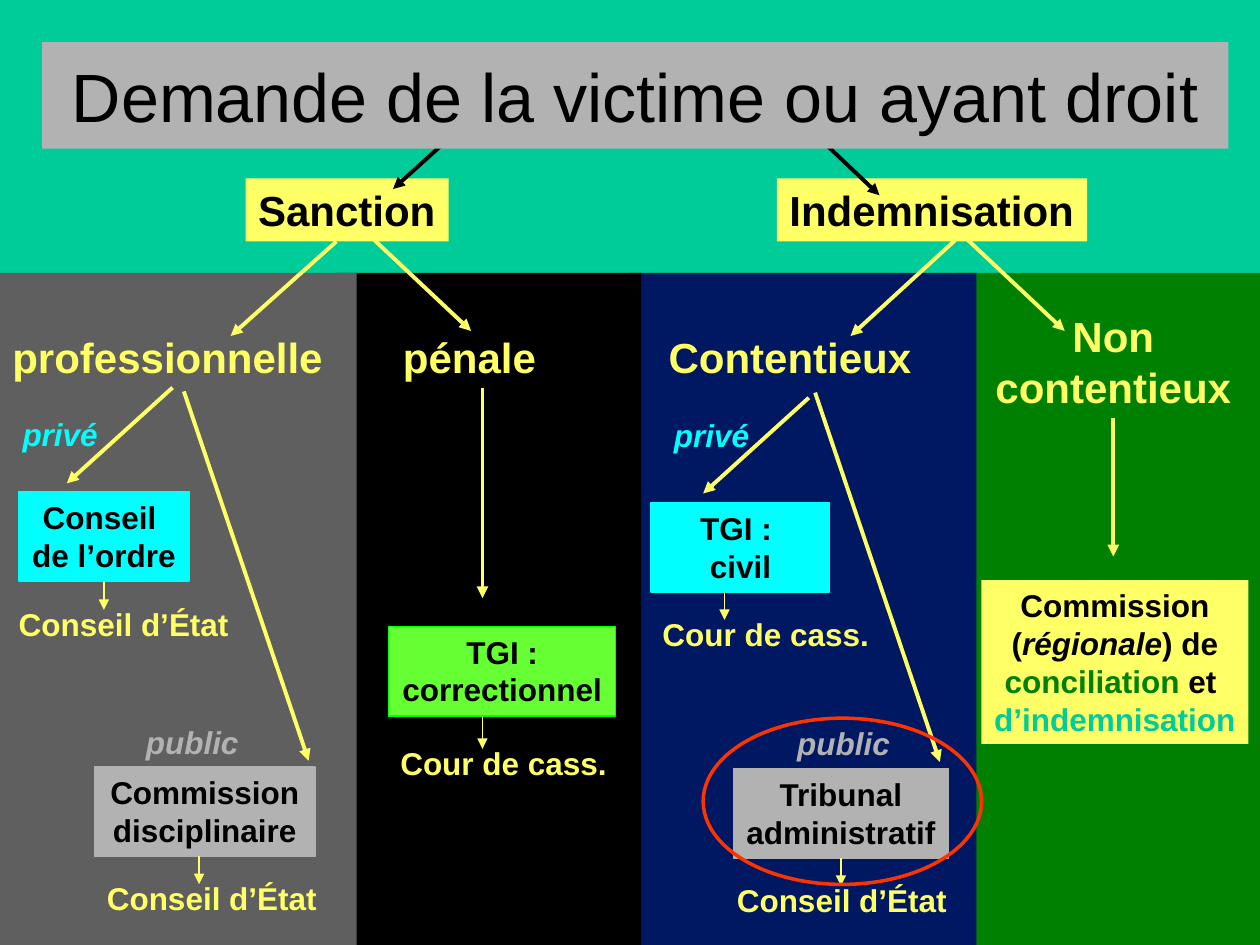
from pptx import Presentation
from pptx.dml import color
from pptx.enum import shapes, text
from pptx.oxml import ns
from pptx import util as u
from lxml import etree

Pt = u.Pt
YELLOW, CYAN, GREY, TEAL, BLACK = "FFFF66", "00FFFF", "B2B2B2", "00CC99", "000000"
COL_TOP, COL_H = 156, 384


def rgb(value):
    return color.RGBColor.from_string(value)


def style(r, size, ink, bold=True, italic=False):
    f = r.font
    f.name, f.size, f.bold, f.italic = "Arial", Pt(size), bold, italic
    f.color.rgb = rgb(ink)


def panel(s, x, y, w, h, fill=None, line=None, width=0.75, kind=shapes.MSO_SHAPE.RECTANGLE):
    sp = s.shapes.add_shape(kind, Pt(x), Pt(y), Pt(w), Pt(h))
    sp.shadow.inherit = False
    if fill:
        sp.fill.solid()
        sp.fill.fore_color.rgb = rgb(fill)
    else:
        sp.fill.background()
    if line:
        sp.line.color.rgb = rgb(line)
        sp.line.width = Pt(width)
    else:
        sp.line.fill.background()
    return sp


def label(s, x, y, w, h, words, size=18, ink=YELLOW, fill=None, line=None, italic=False):
    if fill:
        sp = panel(s, x, y, w, h, fill, line)
    else:
        sp = s.shapes.add_textbox(Pt(x), Pt(y), Pt(w), Pt(h))
    tf = sp.text_frame
    tf.text = words
    tf.word_wrap = False
    tf.auto_size = text.MSO_AUTO_SIZE.SHAPE_TO_FIT_TEXT
    tf.vertical_anchor = text.MSO_ANCHOR.TOP
    align = text.PP_ALIGN.CENTER if "\n" in words else text.PP_ALIGN.LEFT
    for p in tf.paragraphs:
        p.alignment = align
        for r in p.runs:
            style(r, size, ink, italic=italic)
    return sp


def arrow(s, x1, y1, x2, y2, ink=YELLOW, width=2.25, start=None):
    cx = s.shapes.add_connector(shapes.MSO_CONNECTOR.STRAIGHT, Pt(x1), Pt(y1), Pt(x2), Pt(y2))
    if start is not None:
        cx.begin_connect(start, 2)
    cx.line.color.rgb = rgb(ink)
    cx.line.width = Pt(width)
    ln = cx.line._get_or_add_ln()
    etree.SubElement(ln, ns.qn("a:tailEnd"), type="triangle")
    etree.SubElement(cx.element.spPr, ns.qn("a:effectLst"))


def court(s, x, y, w, words, fill, line, appeal, appeal_x, stem=None, drop=60.5):
    sp = label(s, x, y, w, 51.1, words, ink=BLACK, fill=fill, line=line)
    stem_x = x + w / 2 if stem is None else stem
    arrow(s, stem_x, y + 51.1, stem_x, y + drop + 6.5, width=1,
          start=sp if stem is None else None)
    label(s, appeal_x, y + drop, 134.6, 28.8, appeal)


def branches(s, x, y, private_start, public_start):
    label(s, x, y, 57.6, 28.8, "privé", ink=CYAN, italic=True)
    label(s, x + 70.5, y + 176, 67.7, 28.8, "public", ink=GREY, italic=True)
    for (x1, y1), dx, dy in ((private_start, -60.4, 54.7), (public_start, 71.3, 211)):
        arrow(s, x1, y1, x1 + dx, y1 + dy)


def header(s, x, y, w, h):
    panel(s, x, y, w, h, TEAL, TEAL, 1)
    label(s, x + 140.4, y + 102, 116, 36, "Sanction", 24, BLACK, YELLOW)
    label(s, x + 444, y + 102, 177.2, 36, "Indemnisation", 24, BLACK, YELLOW)
    arrow(s, x + 284.4, y + 54, x + 224.6, y + 108, BLACK)
    arrow(s, x + 444.2, y + 56.2, x + 502.6, y + 111.6, BLACK)


def non_litigation(s, x, y, w, h):
    panel(s, x, y, w, h, "008000")
    name = label(s, x + 6.5, y + 18, 167.8, 64.8, "Non\ncontentieux", 24)
    arrow(s, x + 3.6, y - 22.3, x + 62.6, y + 33.1)
    arrow(s, x + 90.4, y + 82.8, x + 90.4, y + 162, start=name)
    sp = label(s, x + 15, y + 175.5, 152.6, 93.6,
               "Commission\n(\nconciliation\nd’indemnisation", ink=BLACK, fill=YELLOW)
    ps = sp.text_frame.paragraphs
    for p, words, italic in ((ps[1], "régionale", True), (ps[1], ") de", False), (ps[2], " et ", False)):
        r = p.add_run()
        r.text = words
        style(r, 18, BLACK, italic=italic)
    style(ps[2].runs[0], 18, "008000")
    style(ps[3].runs[0], 18, TEAL)


def litigation(s, x, y, w, h):
    panel(s, x, y, w, h, "001762")
    label(s, x + 15, y + 30, 153.4, 36, "Contentieux", 24)
    arrow(s, x + 185.8, y - 18.7, x + 126, y + 36)
    court(s, x + 12, y + 131.2, 102.2, "TGI : \ncivil", CYAN, CYAN,
          "Cour de cass.", x + 11.5, x + 54)
    court(s, x + 59, y + 283.2, 123.1, "Tribunal\nadministratif", GREY, GREY,
          "Conseil d’État", x + 54)
    branches(s, x + 18, y + 78, (x + 102.2, y + 71.3), (x + 105.8, y + 68.4))


def criminal(s, x, y, w, h):
    panel(s, x, y, w, h, BLACK)
    arrow(s, x + 18, y - 22.3, x + 77, y + 33.1)
    label(s, x + 31, y + 30, 90.7, 36, "pénale", 24)
    arrow(s, x + 83.5, y + 65.5, x + 83.5, y + 185.8)
    court(s, x + 30, y + 202, 129.6, "TGI :\ncorrectionnel", "66FF33", "00FF00",
          "Cour de cass.", x + 29.5, x + 83.5, 63.4)


def professional(s, x, y, w, h):
    panel(s, x, y, w, h, "5F5F5F")
    arrow(s, x + 192.2, y - 18, x + 131.8, y + 36)
    label(s, x, y + 30, 196, 36, "professionnelle", 24)
    court(s, x + 10.8, y + 125, 97.2, "Conseil \nde l’ordre", CYAN, CYAN,
          "Conseil d’État", x + 3.6, drop=61)
    court(s, x + 54, y + 282.2, 126, "Commission \ndisciplinaire", GREY, GREY,
          "Conseil d’État", x + 54, x + 113.8)
    branches(s, x + 5.8, y + 77.4, (x + 98.6, y + 65.5), (x + 105.1, y + 67.7))


def title(s, x, y, w, h):
    sp = s.shapes.title
    sp.left, sp.top, sp.width, sp.height = Pt(x), Pt(y), Pt(w), Pt(h)
    sp.fill.solid()
    sp.fill.fore_color.rgb = rgb(GREY)
    tf = sp.text_frame
    tf.text = "Demande de la victime ou ayant droit"
    tf.word_wrap = True
    tf.auto_size = text.MSO_AUTO_SIZE.NONE
    tf.vertical_anchor = text.MSO_ANCHOR.MIDDLE
    p = tf.paragraphs[0]
    p.alignment = text.PP_ALIGN.CENTER
    style(p.runs[0], 39, BLACK, bold=False)
    sp.element.getparent().append(sp.element)


def main():
    prs = Presentation()
    prs.slide_width, prs.slide_height = Pt(720), Pt(540)
    s = prs.slides.add_slide(prs.slide_layouts[5])
    header(s, 0, 0, 720, COL_TOP)
    for column, x, w in ((non_litigation, 545.8, 174.2), (litigation, 360, 198),
                         (criminal, 192.2, 174.2), (professional, 0, 203.8)):
        column(s, x, COL_TOP, w, COL_H)
    title(s, 24, 24, 678, 61)
    panel(s, 401.8, 410.4, 159.1, 95, line="FF3300", width=2, kind=shapes.MSO_SHAPE.OVAL)
    prs.save("out.pptx")


if __name__ == "__main__":
    main()
